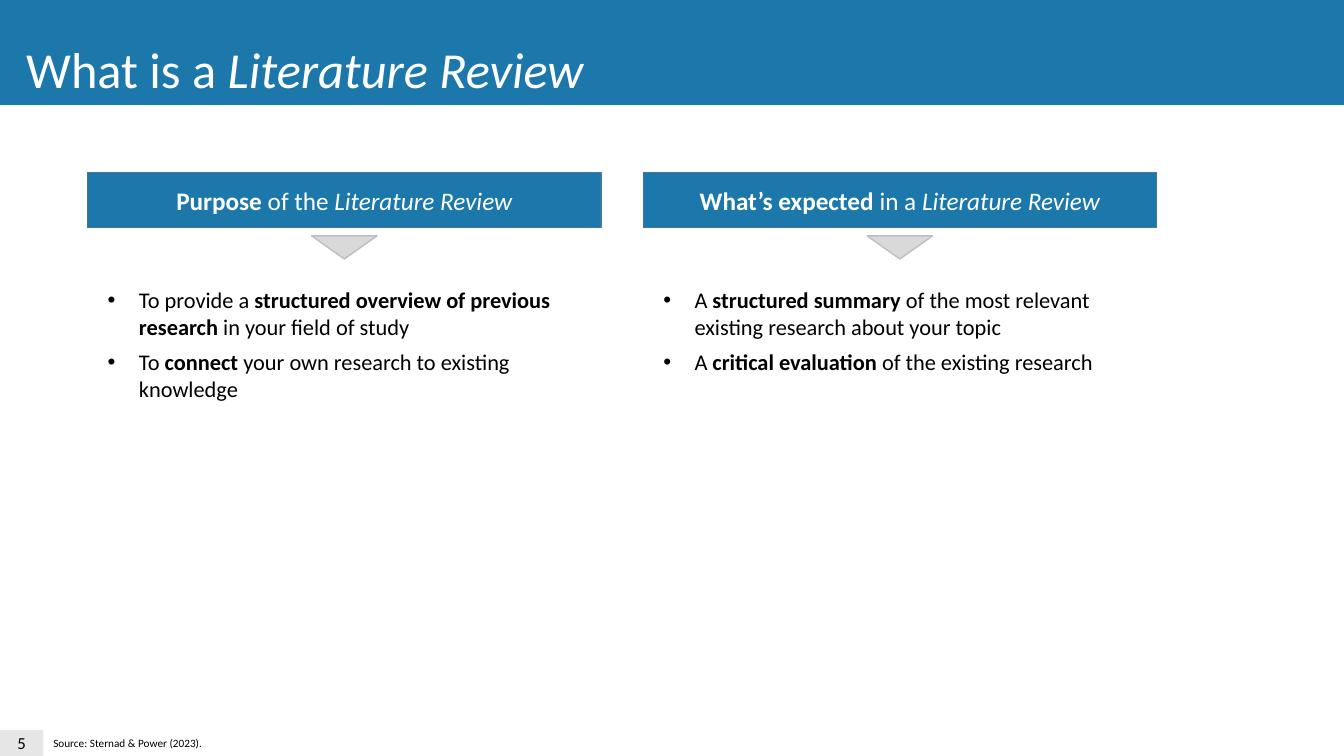
from lxml import etree
from pptx import Presentation
from pptx.dml.color import RGBColor
from pptx.enum import shapes, text
from pptx.oxml import ns
from pptx.util import Inches, Pt

BLUE, WHITE, BLACK = "1C78AB", "FFFFFF", "000000"
PLAIN, BOLD, ITALIC = "plain", "bold", "italic"

TITLE = [("What is a ", PLAIN), ("Literature Review", ITALIC)]
COLUMNS = [
    {
        "heading": [("Purpose ", BOLD), ("of the ", PLAIN), ("Literature Review", ITALIC)],
        "bullets": [
            [("To provide a ", PLAIN), ("structured overview of previous research ", BOLD),
             ("in your field of study", PLAIN)],
            [("To ", PLAIN), ("connect ", BOLD),
             ("your own research to existing knowledge", PLAIN)],
        ],
        "text_height": 1.26,
    },
    {
        "heading": [("What’s expected ", BOLD), ("in a ", PLAIN), ("Literature Review", ITALIC)],
        "bullets": [
            [("A ", PLAIN), ("structured summary ", BOLD),
             ("of the most relevant existing research about your topic", PLAIN)],
            [("A ", PLAIN), ("critical evaluation ", BOLD),
             ("of the existing research", PLAIN)],
        ],
        "text_height": 0.99,
    },
]
PAGE_NUMBER = [("5", PLAIN)]
SOURCE = [("Source: Sternad & Power (2023).", PLAIN)]

COLUMN_LEFT, COLUMN_WIDTH, COLUMN_STEP = 0.87, 5.09, 5.51
ARROW_WIDTH, TEXT_OFFSET, BULLET_INDENT = 0.65, 0.1, 0.31


def color(value):
    return RGBColor.from_string(value)


def write(paragraph, parts, size, ink, align=text.PP_ALIGN.LEFT):
    paragraph.alignment = align
    for words, style in parts:
        run = paragraph.add_run()
        run.text = words
        run.font.name = "Calibri"
        run.font.size = Pt(size)
        run.font.color.rgb = color(ink)
        run.font.bold = style == BOLD
        run.font.italic = style == ITALIC


def add_block(parent, kind, box, fill, line=None):
    shape = parent.add_shape(kind, *map(Inches, box))
    shape.shadow.inherit = False
    shape.fill.solid()
    shape.fill.fore_color.rgb = color(fill)
    if line:
        shape.line.color.rgb = color(line)
        shape.line.width = Pt(1)
    else:
        shape.line.fill.background()
    return shape


def add_label(parent, box, fill, parts, size, ink, line=None):
    shape = add_block(parent, shapes.MSO_SHAPE.RECTANGLE, box, fill, line)
    shape.text_frame.vertical_anchor = text.MSO_ANCHOR.MIDDLE
    write(shape.text_frame.paragraphs[0], parts, size, ink, text.PP_ALIGN.CENTER)


def add_bullet(paragraph):
    properties = paragraph._p.get_or_add_pPr()
    properties.set("marL", str(Inches(BULLET_INDENT)))
    properties.set("indent", str(-Inches(BULLET_INDENT)))
    etree.SubElement(properties, ns.qn("a:buFont")).set("typeface", "Arial")
    etree.SubElement(properties, ns.qn("a:buChar")).set("char", "•")


def add_column(slide, index, column):
    left = COLUMN_LEFT + index * COLUMN_STEP
    group = slide.shapes.add_group_shape().shapes
    add_label(group, (left, 1.71, COLUMN_WIDTH, 0.55), BLUE,
              column["heading"], 18, WHITE, "43739E")
    arrow_left = left + (COLUMN_WIDTH - ARROW_WIDTH) / 2
    arrow = add_block(group, shapes.MSO_SHAPE.ISOSCELES_TRIANGLE,
                      (arrow_left, 2.34, ARROW_WIDTH, 0.23), "D9D9D9", "BFBFBF")
    arrow.element.spPr.xfrm.set("flipV", "1")
    box = (left + TEXT_OFFSET, 2.79, COLUMN_WIDTH, column["text_height"])
    frame = group.add_textbox(*map(Inches, box)).text_frame
    frame.word_wrap = True
    for number, parts in enumerate(column["bullets"]):
        paragraph = frame.add_paragraph() if number else frame.paragraphs[0]
        write(paragraph, parts, 16, BLACK)
        paragraph.space_after = Pt(6)
        add_bullet(paragraph)


def main():
    presentation = Presentation()
    presentation.slide_width, presentation.slide_height = Inches(13.33), Inches(7.5)
    slide = presentation.slides.add_slide(presentation.slide_layouts[5])

    add_label(slide.shapes, (0, 7.24, 0.43, 0.26), "E7E6E6", PAGE_NUMBER, 12, BLACK)
    add_block(slide.shapes, shapes.MSO_SHAPE.RECTANGLE, (0, -0.01, 13.34, 1.05), BLUE)

    title = slide.shapes.title
    title.left, title.top, title.width, title.height = map(Inches, (0.16, 0.33, 5.79, 0.71))
    title.text_frame.auto_size = text.MSO_AUTO_SIZE.NONE
    title.text_frame.word_wrap = False
    title.text_frame.vertical_anchor = text.MSO_ANCHOR.TOP
    write(title.text_frame.paragraphs[0], TITLE, 36, WHITE)
    title.element.getparent().append(title.element)

    for index, column in enumerate(COLUMNS):
        add_column(slide, index, column)

    source = slide.shapes.add_textbox(*map(Inches, (0.43, 7.26, 1.69, 0.24)))
    source.text_frame.word_wrap = False
    write(source.text_frame.paragraphs[0], SOURCE, 8, BLACK)

    presentation.save("out.pptx")


if __name__ == "__main__":
    main()
